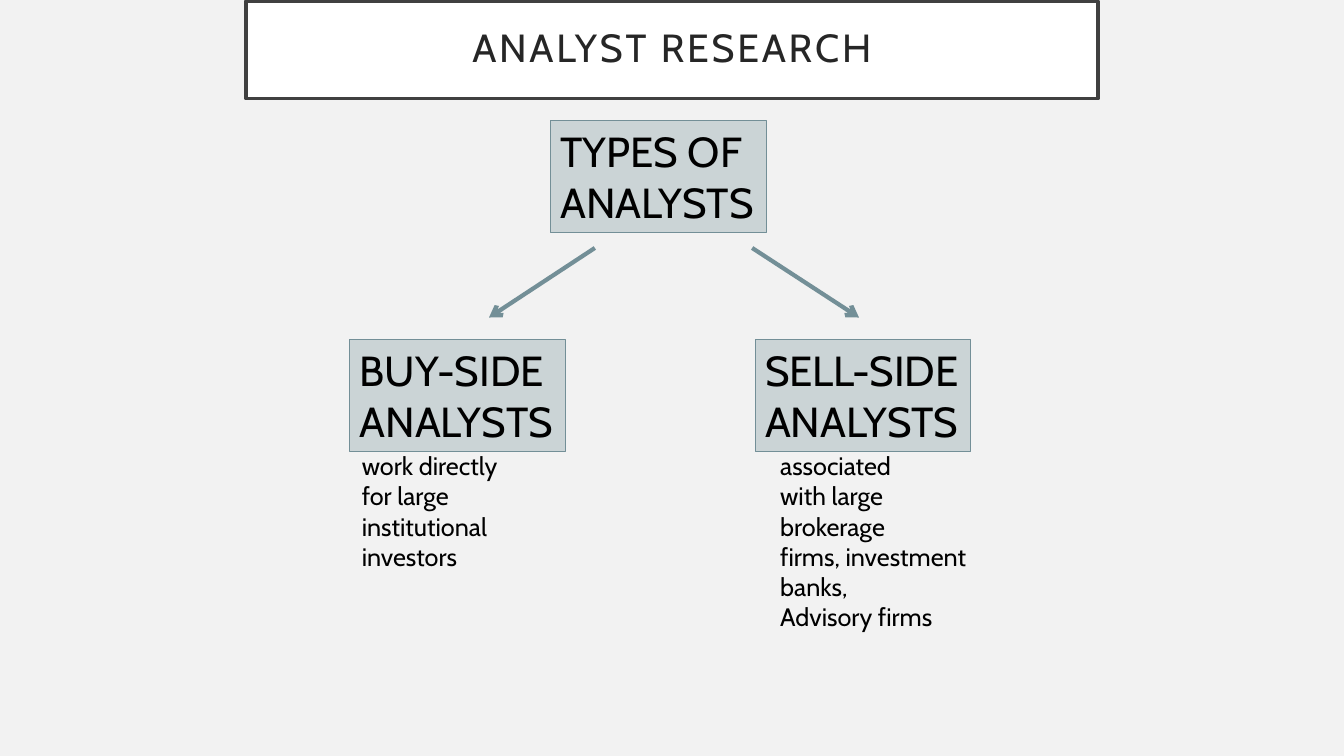
from lxml import etree
from pptx import Presentation
from pptx.dml.color import RGBColor
from pptx.enum.shapes import MSO_CONNECTOR, MSO_SHAPE
from pptx.enum.text import MSO_ANCHOR, MSO_AUTO_SIZE, PP_ALIGN
from pptx.oxml.ns import qn
from pptx.util import Inches, Pt

RECTANGLE = MSO_SHAPE.RECTANGLE
STRAIGHT = MSO_CONNECTOR.STRAIGHT

TITLE = "ANALYST RESEARCH"
ROOT = "TYPES OF\vANALYSTS"
# label, box left, arrow start x, arrow end x, note left, note width, note
BRANCHES = [
    ("BUY-SIDE\vANALYSTS", 3.47, 5.9, 4.85, 3.49, 1.6,
     "work directly\vfor large\vinstitutional\vinvestors"),
    ("SELL-SIDE\vANALYSTS", 7.49, 7.46, 8.52, 7.64, 2.67,
     "associated\vwith large\vbrokerage\vfirms, investment banks,\nAdvisory firms"),
]

FONT = "Cabin"
COLORS = {"background": "F2F2F2", "panel": "FFFFFF", "frame": "404040",
          "title": "262626", "accent": "738F97", "text": "000000"}

BOX_W, BOX_H = 2.14, 1.11
ROOT_LEFT, ROOT_TOP = 5.46, 1.2
ARROW_TOP, ARROW_BOTTOM = 2.46, 3.15
BRANCH_TOP, NOTE_TOP = 3.37, 4.42
NOTE_LINE_H = 0.3


def rgb(name):
    return RGBColor.from_string(COLORS[name])


def paint(target, fill, line, width):
    target.fill.solid()
    target.fill.fore_color.rgb = rgb(fill)
    target.line.color.rgb = rgb(line)
    target.line.width = Pt(width)


def write(frame, text, size, color="text", align=PP_ALIGN.LEFT):
    frame.text = text
    for paragraph in frame.paragraphs:
        paragraph.alignment = align
        for run in paragraph.runs:
            run.font.name = FONT
            run.font.size = Pt(size)
            run.font.color.rgb = rgb(color)


def add_title(slide):
    title = slide.shapes.title
    title.left, title.top = Inches(2.44), Inches(0.01)
    title.width, title.height = Inches(8.45), Inches(0.97)
    paint(title, "panel", "frame", 2.5)
    frame = title.text_frame
    write(frame, TITLE, 28, "title", PP_ALIGN.CENTER)
    frame.auto_size = MSO_AUTO_SIZE.NONE
    frame.vertical_anchor = MSO_ANCHOR.MIDDLE
    frame.margin_left = frame.margin_right = Inches(0.2)
    frame.margin_top = frame.margin_bottom = Inches(0.2)
    heading = frame.paragraphs[0]
    heading.line_spacing = 0.9
    heading.runs[0].font._element.set("spc", "200")


def add_box(slide, label, left, top):
    """Add a label box with a 30 % tint of the accent colour."""
    box = slide.shapes.add_shape(RECTANGLE, Inches(left), Inches(top),
                                 Inches(BOX_W), Inches(BOX_H))
    box.shadow.inherit = False
    paint(box, "accent", "accent", 0.75)
    tint = box._element.spPr.find(qn("a:solidFill")).find(qn("a:srgbClr"))
    etree.SubElement(tint, qn("a:alpha")).set("val", "30000")
    frame = box.text_frame
    write(frame, label, 30)
    frame.word_wrap = False
    frame.auto_size = MSO_AUTO_SIZE.SHAPE_TO_FIT_TEXT
    frame.vertical_anchor = MSO_ANCHOR.TOP


def add_arrow(slide, start_x, end_x):
    arrow = slide.shapes.add_connector(STRAIGHT, Inches(start_x), Inches(ARROW_TOP),
                                       Inches(end_x), Inches(ARROW_BOTTOM))
    arrow.line.color.rgb = rgb("accent")
    arrow.line.width = Pt(3)
    properties = arrow._element.spPr
    etree.SubElement(properties.find(qn("a:ln")), qn("a:tailEnd")).set("type", "arrow")
    etree.SubElement(properties, qn("a:effectLst"))


def add_note(slide, text, left, width):
    lines = len(text.splitlines())
    note = slide.shapes.add_textbox(Inches(left), Inches(NOTE_TOP), Inches(width),
                                    Inches(0.1 + lines * NOTE_LINE_H))
    write(note.text_frame, text, 18)
    note.text_frame.word_wrap = True
    note.text_frame.auto_size = MSO_AUTO_SIZE.SHAPE_TO_FIT_TEXT


def main():
    deck = Presentation()
    deck.slide_width, deck.slide_height = Inches(13.33), Inches(7.5)
    slide = deck.slides.add_slide(deck.slide_layouts.get_by_name("Title Only"))
    slide.background.fill.solid()
    slide.background.fill.fore_color.rgb = rgb("background")

    add_title(slide)
    add_box(slide, ROOT, ROOT_LEFT, ROOT_TOP)
    for label, box_left, start_x, end_x, note_left, note_width, note in BRANCHES:
        add_arrow(slide, start_x, end_x)
        add_box(slide, label, box_left, BRANCH_TOP)
        add_note(slide, note, note_left, note_width)
    deck.save("out.pptx")


if __name__ == "__main__":
    main()
